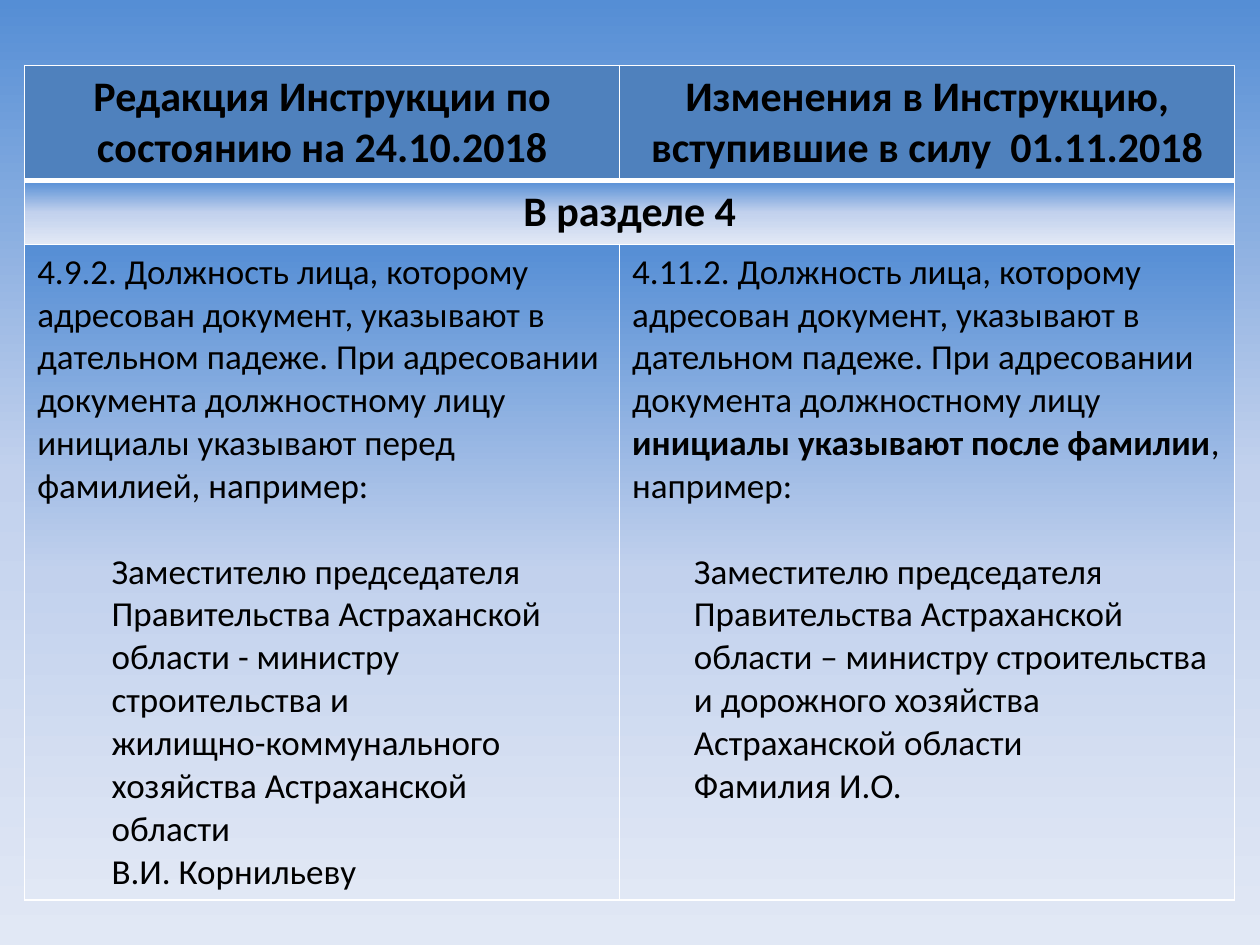
"""Build a slide comparing two editions of an instruction in a table."""
from dataclasses import dataclass

from lxml import etree
from pptx import Presentation
from pptx import util as u
from pptx.dml.color import RGBColor
from pptx.enum import text
from pptx.oxml import ns

Pt = u.Pt
FONT = "Calibri"
BLACK, WHITE, HEADER = "000000", "FFFFFF", "4F81BD"
GRADIENT = ((0, "558ED5"), (50, "C2D1ED"), (100, "E1E8F5"))
COLS = (340, 351.5)
ROWS = (65, 36.5, 366.5)
GAP = 24.4


@dataclass(frozen=True)
class Run:
    text: str
    bold: bool = False


@dataclass(frozen=True)
class Para:
    runs: tuple[Run, ...]
    size: float = 20
    centered: bool = False
    margin: float = 0
    first_line: float = 0
    before: float = 0


def heading(words: str) -> list[Para]:
    return [Para((Run(words, True),), size=24, centered=True)]


def address(lines: tuple[str, ...], margin: float = 0, first_line: float = 0) -> list[Para]:
    return [Para((Run(line),), margin=margin, first_line=first_line,
                 before=0 if i else GAP) for i, line in enumerate(lines)]


OLD_TEXT = [Para((Run(
    "4.9.2. Должность лица, которому адресован документ, указывают в дательном падеже. "
    "При адресовании документа должностному лицу инициалы указывают перед фамилией, "
    "например:"),))] + address((
        "Заместителю председателя", "Правительства Астраханской", "области - министру",
        "строительства и", "жилищно-коммунального", "хозяйства Астраханской", "области",
        "В.И. Корнильеву"), first_line=42.5)

NEW_TEXT = [Para((
    Run("4.11.2.\u00a0Должность лица, которому адресован документ, указывают в дательном "
        "падеже. При адресовании документа должностному лицу "),
    Run("инициалы указывают после фамилии", True),
    Run(", например:")))] + address((
        "Заместителю председателя Правительства Астраханской области – министру "
        "строительства и дорожного хозяйства Астраханской области",
        "Фамилия И.О."), margin=35.3)

CELLS = (
    (heading("Редакция Инструкции по состоянию на 24.10.2018"),
     heading("Изменения в Инструкцию, вступившие в силу  01.11.2018")),
    (heading("В разделе 4"), []),
    (OLD_TEXT, NEW_TEXT),
)


def rgb(value: str) -> RGBColor:
    return RGBColor.from_string(value)


def add(parent, tag: str, **attrs):
    return etree.SubElement(parent, ns.qn(tag), {k: str(v) for k, v in attrs.items()})


def fill_gradient(fill, holder) -> None:
    fill.solid()
    solid = holder.find(ns.qn("a:solidFill"))
    grad = etree.Element(ns.qn("a:gradFill"), rotWithShape="1")
    stops = add(grad, "a:gsLst")
    for percent, color in GRADIENT:
        add(add(stops, "a:gs", pos=percent * 1000), "a:srgbClr", val=color)
    add(grad, "a:lin", ang=90 * 60000, scaled=0)
    holder.replace(solid, grad)


def set_borders(tc_pr, widths: dict[str, float]) -> None:
    for i, (side, width) in enumerate(widths.items()):
        ln = etree.Element(ns.qn(f"a:ln{side}"), w=str(Pt(width)))
        add(add(ln, "a:solidFill"), "a:srgbClr", val=WHITE)
        tc_pr.insert(i, ln)


def write(tf, paras: list[Para]) -> None:
    for i, para in enumerate(paras):
        p = tf.add_paragraph() if i else tf.paragraphs[0]
        p.alignment = text.PP_ALIGN.CENTER if para.centered else text.PP_ALIGN.LEFT
        p.space_before = Pt(para.before)
        p_pr = p._p.get_or_add_pPr()
        p_pr.set("marL", str(Pt(para.margin)))
        p_pr.set("indent", str(Pt(para.first_line)))
        for run in para.runs:
            r = p.add_run()
            r.text = run.text
            r.font.name = FONT
            r.font.size = Pt(para.size)
            r.font.bold = run.bold
            r.font.color.rgb = rgb(BLACK)


def add_comparison(s) -> None:
    table = s.shapes.add_table(len(ROWS), len(COLS), Pt(14.1), Pt(37.4),
                               Pt(sum(COLS)), Pt(sum(ROWS))).table
    for col, width in zip(table.columns, COLS):
        col.width = Pt(width)
    for row, height in zip(table.rows, ROWS):
        row.height = Pt(height)
    table.cell(1, 0).merge(table.cell(1, 1))
    for i, row in enumerate(CELLS):
        for j, paras in enumerate(row):
            cell = table.cell(i, j)
            tc_pr = cell._tc.get_or_add_tcPr()
            if i == 0:
                cell.fill.solid()
                cell.fill.fore_color.rgb = rgb(HEADER)
            else:
                fill_gradient(cell.fill, tc_pr)
            set_borders(tc_pr, {"L": 1, "R": 1, "T": 3 if i == 1 else 1,
                                "B": 3 if i == 0 else 1})
            write(cell.text_frame, paras)


def main() -> None:
    prs = Presentation()
    prs.slide_width, prs.slide_height = Pt(720), Pt(540)
    s = prs.slides.add_slide(prs.slide_layouts[6])
    fill = s.background.fill
    fill.solid()
    fill_gradient(fill, s._element.find(".//" + ns.qn("p:bgPr")))
    add_comparison(s)
    prs.save("out.pptx")


if __name__ == "__main__":
    main()
